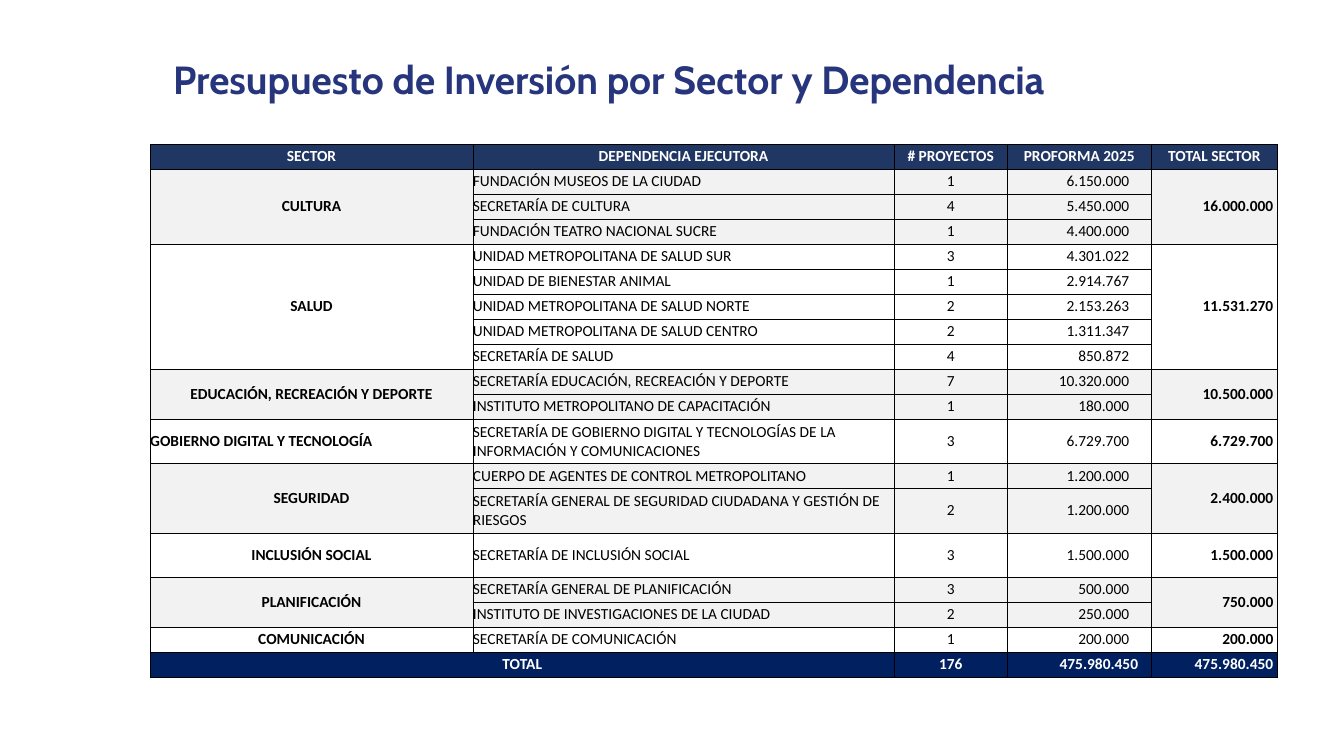
import pptx
import pptx.util
import pptx.dml.color
import pptx.enum.text
import pptx.oxml
import pptx.oxml.ns
from pptx.util import Inches

TITLE = "Presupuesto de Inversión por Sector y Dependencia"
HEADERS = ["SECTOR", "DEPENDENCIA EJECUTORA", "# PROYECTOS", "PROFORMA 2025", "TOTAL SECTOR"]
SECTORS = [
    ("CULTURA", "16.000.000", [
        ("FUNDACIÓN MUSEOS DE LA CIUDAD", "1", "6.150.000"),
        ("SECRETARÍA DE CULTURA", "4", "5.450.000"),
        ("FUNDACIÓN TEATRO NACIONAL SUCRE", "1", "4.400.000"),
    ]),
    ("SALUD", "11.531.270", [
        ("UNIDAD METROPOLITANA DE SALUD SUR", "3", "4.301.022"),
        ("UNIDAD DE BIENESTAR ANIMAL", "1", "2.914.767"),
        ("UNIDAD METROPOLITANA DE SALUD NORTE", "2", "2.153.263"),
        ("UNIDAD METROPOLITANA DE SALUD CENTRO", "2", "1.311.347"),
        ("SECRETARÍA DE SALUD", "4", "850.872"),
    ]),
    ("EDUCACIÓN, RECREACIÓN Y DEPORTE", "10.500.000", [
        ("SECRETARÍA EDUCACIÓN, RECREACIÓN Y DEPORTE", "7", "10.320.000"),
        ("INSTITUTO METROPOLITANO DE CAPACITACIÓN", "1", "180.000"),
    ]),
    ("GOBIERNO DIGITAL Y TECNOLOGÍA", "6.729.700", [
        ("SECRETARÍA DE GOBIERNO DIGITAL Y TECNOLOGÍAS DE LA INFORMACIÓN Y COMUNICACIONES",
         "3", "6.729.700"),
    ]),
    ("SEGURIDAD", "2.400.000", [
        ("CUERPO DE AGENTES DE CONTROL METROPOLITANO", "1", "1.200.000"),
        ("SECRETARÍA GENERAL DE SEGURIDAD CIUDADANA Y GESTIÓN DE RIESGOS", "2", "1.200.000"),
    ]),
    ("INCLUSIÓN SOCIAL", "1.500.000", [
        ("SECRETARÍA DE INCLUSIÓN SOCIAL", "3", "1.500.000"),
    ]),
    ("PLANIFICACIÓN", "750.000", [
        ("SECRETARÍA GENERAL DE PLANIFICACIÓN", "3", "500.000"),
        ("INSTITUTO DE INVESTIGACIONES DE LA CIUDAD", "2", "250.000"),
    ]),
    ("COMUNICACIÓN", "200.000", [
        ("SECRETARÍA DE COMUNICACIÓN", "1", "200.000"),
    ]),
]
TOTALS = ["TOTAL", "", "176", "475.980.450", "475.980.450"]

COLORS = {"title": "27367C", "header": "203764", "band": "F2F2F2", "plain": "FFFFFF",
          "total": "002060", "text": "000000", "light": "FFFFFF", "border": "000000"}
COLUMN_WIDTHS = [3.2, 4.18, 1.12, 1.43, 1.25]
TABLE_LEFT, TABLE_TOP, TABLE_HEIGHT = 1.49, 1.43, 5.29
TALL_ROWS, TALL_HEIGHT = (11, 13, 14), 0.44
PROFORMA_INSET, TOTAL_PROFORMA_INSET, SECTOR_INSET = 0.22, 0.13, 0.04

ALIGN = pptx.enum.text.PP_ALIGN
MIDDLE = pptx.enum.text.MSO_ANCHOR.MIDDLE


def rgb(name):
    return pptx.dml.color.RGBColor.from_string(COLORS[name])


def style_run(r, font, size, color, bold):
    r.font.name, r.font.size, r.font.bold = font, pptx.util.Pt(size), bold
    r.font.color.rgb = rgb(color)


def add_borders(cell):
    props = cell._tc.get_or_add_tcPr()
    for side in ("lnL", "lnR", "lnT", "lnB"):
        props.append(pptx.oxml.parse_xml(
            f'<a:{side} {pptx.oxml.ns.nsdecls("a")} w="3175"><a:solidFill>'
            f'<a:srgbClr val="{COLORS["border"]}"/></a:solidFill></a:{side}>'))


def fill_cell(cell, text, fill, align, color="text", bold=False, inset=0):
    add_borders(cell)
    cell.fill.solid()
    cell.fill.fore_color.rgb = rgb(fill)
    cell.margin_left = cell.margin_top = cell.margin_bottom = 0
    cell.margin_right = Inches(inset)
    cell.vertical_anchor = MIDDLE
    p = cell.text_frame.paragraphs[0]
    p.text = text
    p.alignment = align
    p.font.size = pptx.util.Pt(11)
    for r in p.runs:
        style_run(r, "Calibri", 11, color, bold)


def add_budget_table(s):
    row_count = 2 + sum(len(units) for _, _, units in SECTORS)
    shape = s.shapes.add_table(row_count, len(HEADERS), Inches(TABLE_LEFT), Inches(TABLE_TOP),
                               Inches(sum(COLUMN_WIDTHS)), Inches(TABLE_HEIGHT))
    table = shape.table
    for column, width in zip(table.columns, COLUMN_WIDTHS):
        column.width = Inches(width)
    short = (TABLE_HEIGHT - TALL_HEIGHT * len(TALL_ROWS)) / (row_count - len(TALL_ROWS))
    for i, row in enumerate(table.rows):
        row.height = Inches(TALL_HEIGHT if i in TALL_ROWS else short)

    for col, text in enumerate(HEADERS):
        fill_cell(table.cell(0, col), text, "header", ALIGN.CENTER, "light", True)

    top = 1
    for n, (sector, amount, units) in enumerate(SECTORS):
        fill = "plain" if n % 2 else "band"
        sector_align = ALIGN.LEFT if sector.startswith("GOBIERNO") else ALIGN.CENTER
        for k, (unit, projects, proforma) in enumerate(units):
            first = k == 0
            row = [table.cell(top + k, col) for col in range(len(HEADERS))]
            fill_cell(row[0], sector if first else "", fill, sector_align, bold=True)
            fill_cell(row[1], unit, fill, ALIGN.LEFT)
            fill_cell(row[2], projects, fill, ALIGN.CENTER)
            fill_cell(row[3], proforma, fill, ALIGN.RIGHT, inset=PROFORMA_INSET)
            fill_cell(row[4], amount if first else "", fill, ALIGN.RIGHT, bold=True,
                      inset=SECTOR_INSET)
        bottom = top + len(units) - 1
        if bottom > top:
            for col in (0, 4):
                table.cell(top, col).merge(table.cell(bottom, col))
        top = bottom + 1

    aligns = [ALIGN.CENTER] * 3 + [ALIGN.RIGHT] * 2
    insets = [0, 0, 0, TOTAL_PROFORMA_INSET, SECTOR_INSET]
    for col, (text, align, inset) in enumerate(zip(TOTALS, aligns, insets)):
        fill_cell(table.cell(top, col), text, "total", align, "light", True, inset)
    table.cell(top, 0).merge(table.cell(top, 1))


def add_title(s):
    tf = s.shapes.add_textbox(Inches(1.62), Inches(0.16), Inches(11.53), Inches(1.31)).text_frame
    tf.word_wrap = True
    tf.vertical_anchor = MIDDLE
    p = tf.paragraphs[0]
    p.text = TITLE
    p.line_spacing = 0.9
    style_run(p.runs[0], "Cabin", 28, "title", True)


def main():
    prs = pptx.Presentation()
    prs.slide_width, prs.slide_height = Inches(13.33), Inches(7.5)
    s = prs.slides.add_slide(prs.slide_layouts[6])
    add_budget_table(s)
    add_title(s)
    prs.save("out.pptx")


if __name__ == "__main__":
    main()
